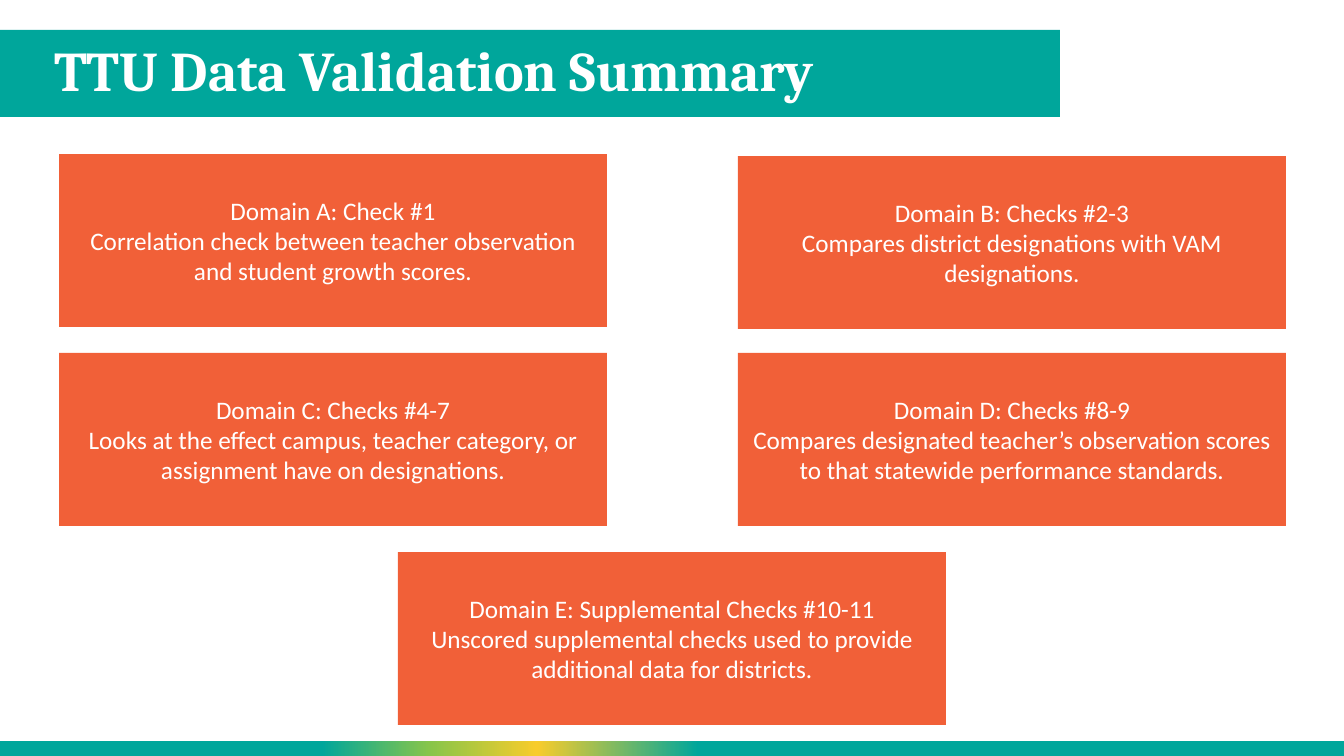
from dataclasses import dataclass

import lxml.etree
import pptx
import pptx.dml.color
import pptx.enum.shapes
import pptx.enum.text
import pptx.oxml.ns
import pptx.util

SCALE = 914400 / 100.8


@dataclass(frozen=True)
class Theme:
    teal: str = "00A69B"
    gold: str = "F8CC2B"
    green: str = "87C54A"
    coral: str = "F16038"
    white: str = "FFFFFF"
    head: str = "Cambria"
    body: str = "Calibri"
    large: int = 40
    small: int = 18


@dataclass(frozen=True)
class Card:
    left: int
    top: int
    label: str
    text: str


THEME = Theme()
WIDE, HIGH = 1344, 756
CARD_W, CARD_H = 548, 173
LEFT, MID, RIGHT = 59, 398, 738
ROWS = [154 + 199 * row for row in range(3)]
CARDS = [
    Card(LEFT, ROWS[0], "Domain A: Check #1",
         "Correlation check between teacher observation and student growth scores."),
    Card(RIGHT, ROWS[0] + 2, "Domain B: Checks #2-3",
         "Compares district designations with VAM designations."),
    Card(LEFT, ROWS[1], "Domain C: Checks #4-7",
         "Looks at the effect campus, teacher category, or assignment have on designations."),
    Card(RIGHT, ROWS[1], "Domain D: Checks #8-9",
         "Compares designated teacher’s observation scores to that statewide performance standards."),
    Card(MID, ROWS[2], "Domain E: Supplemental Checks #10-11",
         "Unscored supplemental checks used to provide additional data for districts."),
]
STOPS = [(0, THEME.teal), (24, THEME.teal), (32, THEME.green),
         (40, THEME.gold), (52, THEME.teal), (100, THEME.teal)]


def px(size: int) -> pptx.util.Emu:
    return pptx.util.Emu(round(size * SCALE))


def rgb(code: str) -> pptx.dml.color.RGBColor:
    return pptx.dml.color.RGBColor.from_string(code)


def write(shape, text: str, *, font: str, size: int, align, bold: bool = False,
          space: float = 1.0) -> None:
    frame = shape.text_frame
    frame.text = text
    frame.word_wrap = True
    frame.auto_size = pptx.enum.text.MSO_AUTO_SIZE.NONE
    frame.vertical_anchor = pptx.enum.text.MSO_ANCHOR.MIDDLE
    for para in frame.paragraphs:
        para.alignment = align
        para.line_spacing = space
        for run in para.runs:
            run.font.name = font
            run.font.size = pptx.util.Pt(size)
            run.font.bold = bold
            run.font.color.rgb = rgb(THEME.white)


def block(slide, left: int, top: int, width: int, height: int, color: str):
    shape = slide.shapes.add_shape(pptx.enum.shapes.MSO_SHAPE.RECTANGLE,
                                   px(left), px(top), px(width), px(height))
    shape.shadow.inherit = False
    shape.fill.solid()
    shape.fill.fore_color.rgb = rgb(color)
    shape.line.fill.background()
    return shape


def blend(shape, stops: list[tuple[int, str]]) -> None:
    shape.fill.gradient()
    shape.fill.gradient_angle = 0
    name = pptx.oxml.ns.qn
    group = shape.element.spPr.find(name("a:gradFill")).find(name("a:gsLst"))
    for stop in list(group):
        group.remove(stop)
    for place, color in stops:
        stop = lxml.etree.SubElement(group, name("a:gs"), pos=str(place * 1000))
        lxml.etree.SubElement(stop, name("a:srgbClr"), val=color)


def main() -> None:
    deck = pptx.Presentation()
    deck.slide_width, deck.slide_height = px(WIDE), px(HIGH)
    slide = deck.slides.add_slide(deck.slide_layouts[5])
    title = slide.shapes.title
    band = block(slide, -1, 30, 1061, 87, THEME.teal)
    strip = block(slide, -1, 741, WIDE + 1, 15, THEME.teal)
    blend(strip, STOPS)
    for shape in (band, strip):
        title.element.addprevious(shape.element)
    title.left, title.top = px(44), px(30)
    title.width, title.height = px(1014), px(87)
    write(title, "TTU Data Validation Summary", font=THEME.head, size=THEME.large,
          align=pptx.enum.text.PP_ALIGN.LEFT, bold=True, space=0.9)
    for card in CARDS:
        shape = block(slide, card.left, card.top, CARD_W, CARD_H, THEME.coral)
        write(shape, f"{card.label}\n{card.text}", font=THEME.body, size=THEME.small,
              align=pptx.enum.text.PP_ALIGN.CENTER)
    deck.save("out.pptx")


if __name__ == "__main__":
    main()
